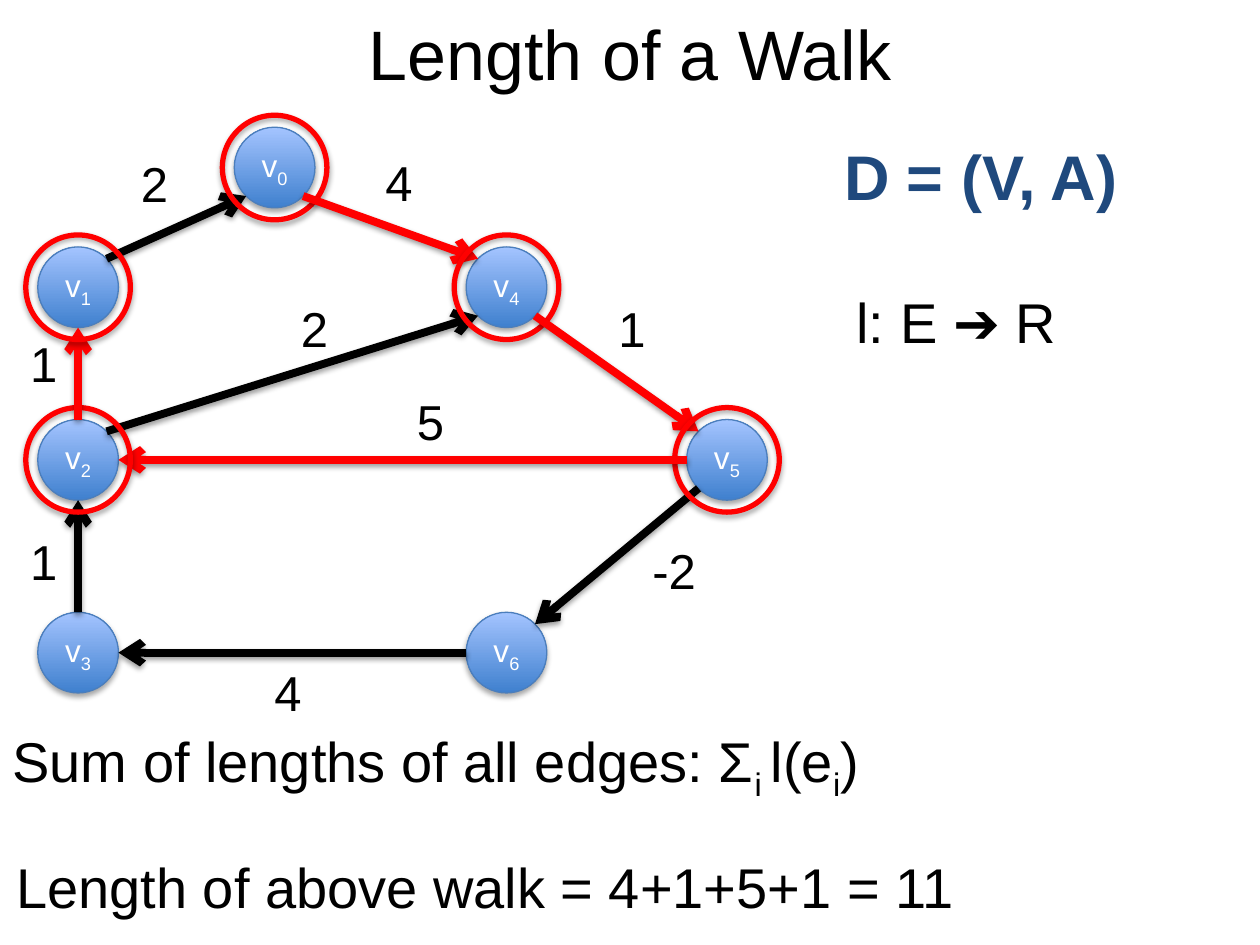
import math
from dataclasses import dataclass

import lxml.etree
import pptx
import pptx.dml.color
import pptx.enum.shapes
import pptx.enum.text
import pptx.oxml.ns
import pptx.util

SHAPE = pptx.enum.shapes.MSO_SHAPE
ALIGN = pptx.enum.text.PP_ALIGN
ANCHOR = pptx.enum.text.MSO_ANCHOR
qn = pptx.oxml.ns.qn


@dataclass(frozen=True)
class Theme:
    font: str = "Arial"
    ink: str = "000000"
    accent: str = "1F497D"
    walk: str = "FF0000"
    node_text: str = "FFFFFF"
    node_line: str = "4B7EBC"
    node_low: str = "3F80CE"
    node_high: str = "A4C4FF"
    title: int = 40
    heading: int = 36
    body: int = 32
    label: int = 28
    node: int = 18
    columns: int = 100
    rows: int = 75
    node_size: float = 6.4
    ring_size: float = 8.3


class GraphSlide:
    def __init__(self, prs, theme):
        self.theme = theme
        self.s = prs.slides.add_slide(prs.slide_layouts[6])
        self.cell_w = prs.slide_width / theme.columns
        self.cell_h = prs.slide_height / theme.rows
        self.centres = {}

    def place(self, *lengths):
        cells = (self.cell_w, self.cell_h) * 2
        return [round(n * cell) for n, cell in zip(lengths, cells)]

    def color(self, value):
        return pptx.dml.color.RGBColor.from_string(value)

    def set_text(self, tf, text, size, color, bold=False, align=ALIGN.LEFT):
        p = tf.paragraphs[0]
        p.alignment = align
        p.font.name = self.theme.font
        p.font.size = pptx.util.Pt(size)
        p.font.bold = bold
        p.font.color.rgb = self.color(color)
        for i, part in enumerate(text.split("|")):
            r = p.add_run()
            r.text = part
            if i % 2:
                r._r.get_or_add_rPr().set("baseline", "-25000")

    def text(self, text, at, size, color=None, bold=False):
        tf = self.s.shapes.add_textbox(*self.place(*at)).text_frame
        tf.word_wrap = False
        tf.auto_size = pptx.enum.text.MSO_AUTO_SIZE.SHAPE_TO_FIT_TEXT
        self.set_text(tf, text, size, color or self.theme.ink, bold)

    def title(self, text, at):
        tf = self.s.shapes.add_textbox(*self.place(*at)).text_frame
        tf.word_wrap = True
        tf.vertical_anchor = ANCHOR.MIDDLE
        self.set_text(tf, text, self.theme.title, self.theme.ink, align=ALIGN.CENTER)

    def shadow(self, effects, distance, alpha):
        shadow = lxml.etree.SubElement(
            effects, qn("a:outerShdw"), blurRad="40000", dist=str(distance),
            dir="5400000", rotWithShape="0")
        black = lxml.etree.SubElement(shadow, qn("a:srgbClr"), val="000000")
        lxml.etree.SubElement(black, qn("a:alpha"), val=str(alpha * 1000))

    def circle(self, name, size, line, width):
        x, y = self.centres[name]
        at = self.place(x - size / 2, y - size / 2, size, size)
        sp = self.s.shapes.add_shape(SHAPE.OVAL, *at)
        sp.line.color.rgb = self.color(line)
        sp.line.width = pptx.util.Pt(width)
        sp.shadow.inherit = False
        self.shadow(sp._element.spPr.find(qn("a:effectLst")), 23000, 35)
        return sp

    def node(self, name, centre):
        self.centres[name] = centre
        sp = self.circle(name, self.theme.node_size, self.theme.node_line, 0.75)
        sp.fill.gradient()
        sp.fill.gradient_angle = 90
        colors = (self.theme.node_low, self.theme.node_high)
        for stop, color in zip(sp.fill.gradient_stops, colors):
            stop.color.rgb = self.color(color)
        tf = sp.text_frame
        tf.margin_left = tf.margin_right = tf.margin_top = tf.margin_bottom = 0
        tf.vertical_anchor = ANCHOR.MIDDLE
        self.set_text(tf, f"v|{name}", self.theme.node, self.theme.node_text,
                      align=ALIGN.CENTER)

    def ring(self, name):
        sp = self.circle(name, self.theme.ring_size, self.theme.walk, 3)
        sp.fill.background()

    def rim(self, name, degrees):
        x, y = self.centres[name]
        radius = self.theme.node_size / 2
        angle = math.radians(degrees)
        return self.place(x + radius * math.cos(angle), y + radius * math.sin(angle))

    def edge(self, start, start_angle, end, end_angle, color):
        line = self.s.shapes.add_connector(
            pptx.enum.shapes.MSO_CONNECTOR.STRAIGHT,
            *self.rim(start, start_angle), *self.rim(end, end_angle))
        line.line.color.rgb = self.color(color)
        line.line.width = pptx.util.Pt(4.5)
        spPr = line._element.spPr
        lxml.etree.SubElement(spPr.find(qn("a:ln")), qn("a:tailEnd"), type="arrow")
        self.shadow(lxml.etree.SubElement(spPr, qn("a:effectLst")), 20000, 38)


LEFT, MIDDLE, RIGHT = 6.2, 40.2, 57.7
UPPER, CENTRE, LOWER = 22.8, 36.5, 51.8
NODES = {1: (LEFT, UPPER), 0: (21.8, 13.3), 2: (LEFT, CENTRE),
         6: (MIDDLE, LOWER), 4: (MIDDLE, UPPER), 5: (RIGHT, CENTRE),
         3: (LEFT, LOWER)}
OTHER_EDGES = [(2, -45, 4, 135), (1, -45, 0, 135), (5, 135, 6, -45),
               (6, 180, 3, 0), (3, -90, 2, 90)]
WALK = [(0, 45, 4, -135), (4, 45, 5, -135), (5, 180, 2, 0), (2, -90, 1, 90)]
LENGTHS = [("2", 10.2, 11.7), ("4", 29.6, 11.6), ("2", 22.9, 23.2),
           ("5", 32.1, 30.6), ("1", 48.1, 23.2), ("1", 1.4, 26),
           ("1", 1.4, 41.7), ("4", 20.8, 52.1), ("-2", 50.8, 42.4)]


def main():
    prs = pptx.Presentation()
    prs.slide_width = pptx.util.Inches(10)
    prs.slide_height = pptx.util.Inches(7.5)
    theme = Theme()
    graph = GraphSlide(prs, theme)

    graph.title("Length of a Walk", (5, 0.6, 90, 7.1))
    graph.text("D = (V, A)", (66, 10.4, 24.1, 7.1), theme.heading, theme.accent, True)
    for name, centre in NODES.items():
        graph.node(name, centre)
    for edge in OTHER_EDGES:
        graph.edge(*edge, theme.ink)
    for edge in WALK:
        graph.ring(edge[0])
        graph.edge(*edge, theme.walk)
    graph.ring(WALK[-1][2])

    graph.text("l: E ➔ R", (67, 22.3, 19, 6.4), theme.body)
    for length, x, y in LENGTHS:
        graph.text(length, (x, y, 2.9 + 1.3 * len(length), 5.7), theme.label)
    graph.text("Sum of lengths of all edges: Σ|i |l(e|i|)", (0, 57.2, 71.1, 6.4),
               theme.body)
    graph.text("Length of above walk = 4+1+5+1 = 11", (0.3, 67.2, 77.5, 6.4),
               theme.body)
    prs.save("out.pptx")


if __name__ == "__main__":
    main()
